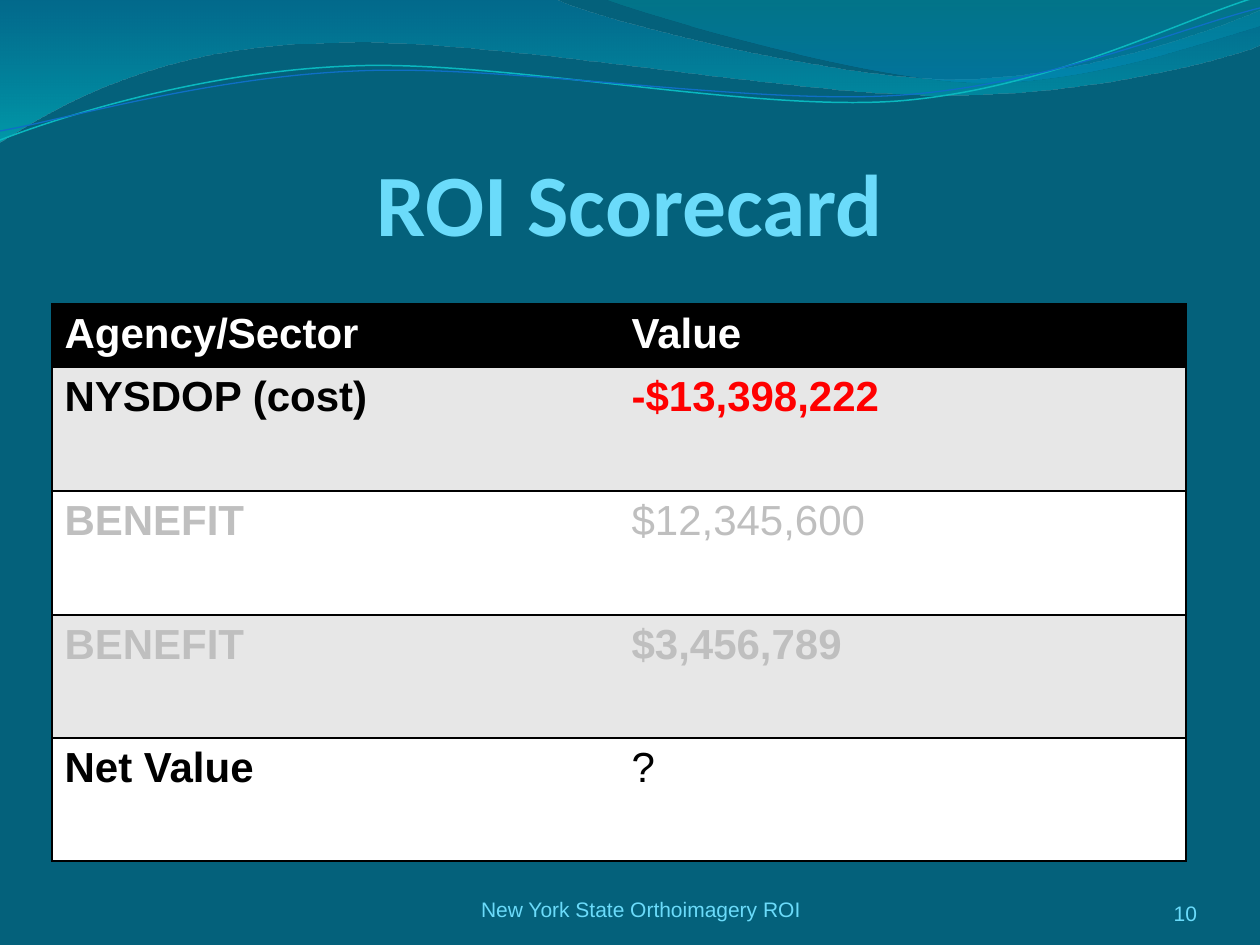
from lxml.etree import SubElement
from pptx import Presentation
from pptx.dml.color import RGBColor as RGB
from pptx.enum.text import MSO_ANCHOR as ANCHOR, PP_ALIGN as ALIGN
from pptx.oxml import parse_xml
from pptx.oxml.ns import nsdecls, qn
from pptx.util import Pt

SCALE = 914400 / 126  # EMU per px
PLAIN_TABLE = "{2D5ABB26-0587-4C30-8999-92F81FD0307C}"
COLORS = {
    "back": "04617B", "sky": "6BDBFA", "black": "000000", "white": "FFFFFF",
    "band": "E7E7E7", "muted": "BFBFBF", "red": "FF0000",
    "teal_line": "0AB8BF", "blue_line": "0F6FC6",
}

# Waves: a start point, then lines (2 numbers) and curves (6 numbers)
FILLED_WAVES = [
    ([(0, 0), (554, -1), (600, 21, 837, 79, 955, 79),
      (1075, 79, 1207, 33, 1260, 11), (1261, 45),
      (1239, 55, 1096, 96, 940, 95), (784, 95, 481, 35, 324, 43),
      (163, 45, 58, 105, -1, 142)],
     [(0, "0074A1", 45), (1, "00C6CF", 55)]),
    ([(604, -1), (641, 14, 859, 78, 969, 82),
      (1079, 87, 1211, 40, 1260, 26), (1260, 0)],
     [(0, "00A1A9", 30), (0.8, "008BBF", 45)]),
]
LINE_WAVES = [
    ([(0, 140), (60, 117, 199, 72, 349, 66), (498, 59, 747, 112, 898, 101),
      (1050, 89, 1182, 19, 1257, -3)], "teal_line", 0.85),
    ([(0, 131), (59, 121, 207, 77, 357, 71), (508, 64, 752, 106, 903, 95),
      (1053, 84, 1186, 26, 1260, 8)], "blue_line", 0.75),
]

# Table rows: height, fill, then text, colour and bold for each cell
ROWS = [
    (60, "black", ("Agency/Sector", "white", True), ("Value", "white", True)),
    (124, "band", ("NYSDOP (cost)", "black", True),
     ("-$13,398,222", "red", True)),
    (124, "white", ("BENEFIT", "muted", True), ("$12,345,600", "muted", False)),
    (123, "band", ("BENEFIT", "muted", True), ("$3,456,789", "muted", True)),
    (123, "white", ("Net Value", "black", True), ("?", "black", False)),
]


def px(n):
    return round(n * SCALE)


def rgb(name):
    return RGB.from_string(COLORS[name])


def style_run(r, color, **font):
    for name, value in font.items():
        setattr(r.font, name, value)
    r.font.color.rgb = rgb(color)


def add_text(s, box, text, align, **font):
    tf = s.shapes.add_textbox(*map(px, box)).text_frame
    frame = dict(word_wrap=True, vertical_anchor=ANCHOR.BOTTOM, margin_left=0,
                 margin_right=0, margin_top=0, margin_bottom=0)
    for name, value in frame.items():
        setattr(tf, name, value)
    p = tf.paragraphs[0]
    p.alignment = align
    r = p.add_run()
    r.text = text
    style_run(r, "sky", **font)


def add_wave(s, parts, close):
    points = [tuple(map(px, part[i:i + 2]))
              for part in parts for i in range(0, len(part), 2)]
    builder = s.shapes.build_freeform(*points[0])
    builder.add_line_segments(points[1:], close=close)
    sp = builder.convert_to_shape()
    sp.shadow.inherit = False

    # Join each three segments of a curve into one cubic curve
    segments = iter(list(sp._element.iter(qn("a:lnTo"))))
    for part in parts[1:]:
        first = next(segments)
        if len(part) == 6:
            first.tag = qn("a:cubicBezTo")
            for _ in range(2):
                segment = next(segments)
                first.append(segment[0])
                segment.getparent().remove(segment)
    return sp


def add_filled_wave(s, parts, stops):
    sp = add_wave(s, parts, True)
    sp.line.fill.background()
    sp.fill.gradient()
    sp.fill.gradient_angle = 270
    for stop, (position, color, _) in zip(sp.fill.gradient_stops, stops):
        stop.position = position
        stop.color.rgb = RGB.from_string(color)
    # Transparency of each stop
    colors = sp._element.spPr.iter(qn("a:srgbClr"))
    for element, (_, _, alpha) in zip(colors, stops):
        SubElement(element, qn("a:alpha"), val=str(alpha * 1000))


def add_line_wave(s, parts, color, width):
    sp = add_wave(s, parts, False)
    sp.fill.background()
    sp.line.color.rgb = rgb(color)
    sp.line.width = Pt(width)


def set_borders(cell, sides):
    tc_pr = cell._tc.get_or_add_tcPr()
    for i, side in enumerate(sides):
        tc_pr.insert(i, parse_xml(
            f'<a:ln{side} {nsdecls("a")} w="12700"><a:solidFill>'
            f'<a:srgbClr val="{COLORS["black"]}"/></a:solidFill></a:ln{side}>'))


def add_scorecard(s, left, top, width):
    height = sum(row[0] for row in ROWS)
    table = s.shapes.add_table(len(ROWS), 2, px(left), px(top),
                               px(width), px(height)).table
    table.first_row = table.horz_banding = False
    table._tbl.tblPr.find(qn("a:tableStyleId")).text = PLAIN_TABLE
    for i, (row_height, fill, *cells) in enumerate(ROWS):
        table.rows[i].height = px(row_height)
        for j, (text, color, bold) in enumerate(cells):
            cell = table.cell(i, j)
            cell.fill.solid()
            cell.fill.fore_color.rgb = rgb(fill)
            r = cell.text_frame.paragraphs[0].add_run()
            r.text = text
            style_run(r, color, name="Arial", size=Pt(24), bold=bold)
            set_borders(cell, ("LTB", "RTB")[j])


def main():
    prs = Presentation()
    prs.slide_width, prs.slide_height = px(1260), px(945)
    s = prs.slides.add_slide(prs.slide_layouts[6])
    s.background.fill.solid()
    s.background.fill.fore_color.rgb = rgb("back")

    # Waves along the top
    for wave in FILLED_WAVES:
        add_filled_wave(s, *wave)
    for wave in LINE_WAVES:
        add_line_wave(s, *wave)

    # Title and table
    add_text(s, (63, 97, 1134, 157), "ROI Scorecard", ALIGN.CENTER,
             name="Calibri", size=Pt(50), bold=True)
    add_scorecard(s, 52, 304, 1134)

    # Footer
    small = dict(name="Arial", size=Pt(12))
    add_text(s, (410, 872, 462, 50), "New York State Orthoimagery ROI",
             ALIGN.CENTER, **small)
    add_text(s, (1092, 876, 105, 50), "10", ALIGN.RIGHT, **small)
    prs.save("out.pptx")


if __name__ == "__main__":
    main()
